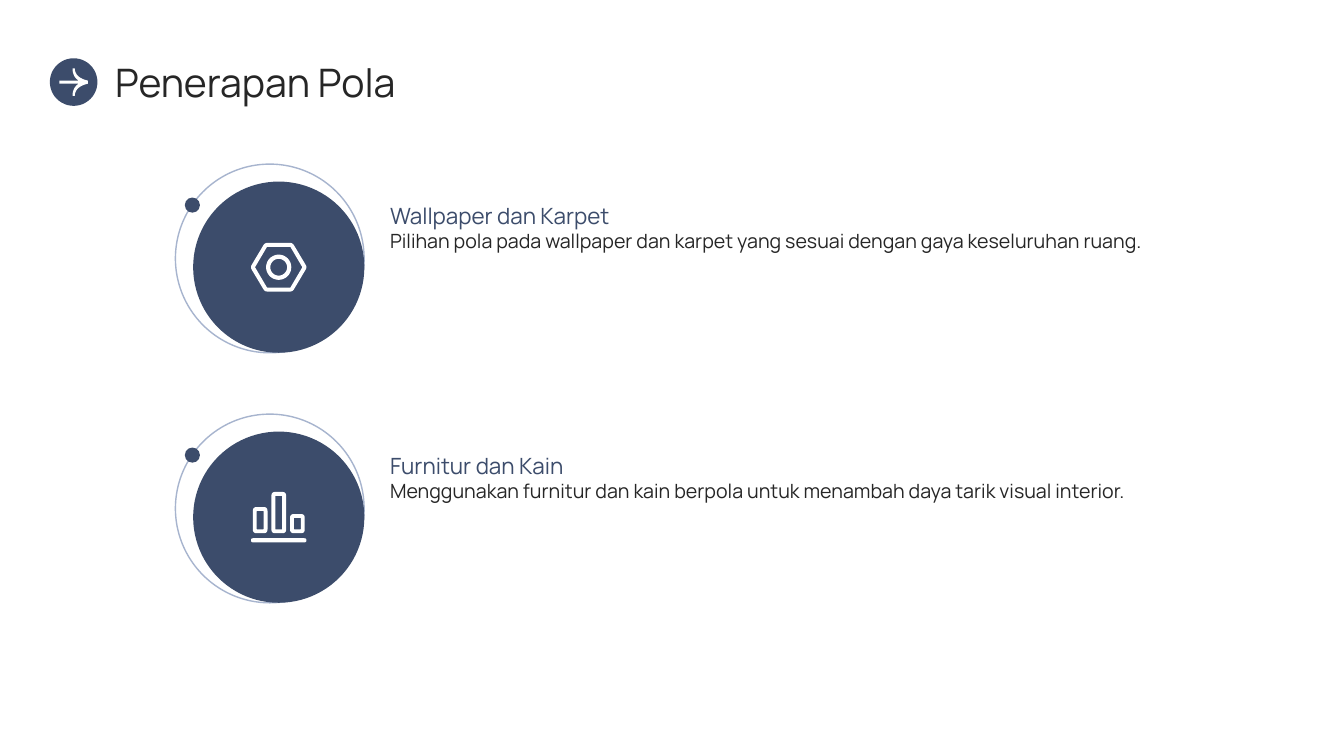
from math import cos, dist, pi, sin

from pptx import Presentation
from pptx import util as u
from pptx.dml import color
from pptx.enum import shapes, text

COLORS = {"navy": "3C4C6B", "pale": "A7B4CE", "ink": "262626", "white": "FFFFFF"}


def bend(start, control, end, steps=8):
    ratios = [step / steps for step in range(steps + 1)]
    return [tuple((1 - t) ** 2 * a + 2 * t * (1 - t) * b + t * t * c
                  for a, b, c in zip(start, control, end)) for t in ratios]


def toward(start, end, length):
    ratio = length / dist(start, end)
    return tuple(a + (b - a) * ratio for a, b in zip(start, end))


def rounded(corners, radius):
    points = []
    for index, corner in enumerate(corners):
        following = corners[(index + 1) % len(corners)]
        points += bend(toward(corner, corners[index - 1], radius), corner,
                       toward(corner, following, radius))
    return points


def block(left, top, right, bottom, radius):
    return rounded([(left, top), (right, top), (right, bottom), (left, bottom)], radius)


def circle(x, y, radius, steps=48):
    angles = [2 * pi * step / steps for step in range(steps)]
    return [(x + radius * cos(angle), y + radius * sin(angle)) for angle in angles]


def hexagon(x, y, half_width, half_top, half_height, radius):
    corners = [(-half_width, 0), (-half_top, -half_height), (half_top, -half_height),
               (half_width, 0), (half_top, half_height), (-half_top, half_height)]
    return rounded([(x + dx, y + dy) for dx, dy in corners], radius)


def nut_icon():
    x, y = 199.1, 190.9
    return [hexagon(x, y, 20.3, 9.9, 17.4, 2), hexagon(x, y, 16.9, 8.3, 14.6, 0.3),
            circle(x, y, 9), circle(x, y, 6)]


def bars_icon():
    left, bottom, width, pitch, wall = 180.6, 380.9, 10.5, 13.3, 2.8
    contours = [block(179.3, 384.5, 218.9, 387.4, 1.4)]
    for index, top in enumerate((362.2, 351.4, 367.2)):
        start = left + index * pitch
        end = start + width
        contours += [block(start, top, end, bottom, 2.8),
                     block(start + wall, top + wall, end - wall, bottom - wall, 0.2)]
    return contours


def arrow_icon():
    middle = 58.7
    upper = [(42.5, 57.6), *bend((56.2, 57.6), (51.8, 54.7), (51.8, 48.9)),
             *bend((53.4, 48.9), (53.6, 55.5), (62.7, 57.6))]
    return [upper + [(x, 2 * middle - y) for x, y in reversed(upper)]]


class Slide:
    """Draws the elements of one slide in a shared style."""

    font = "Manrope"

    def __init__(self, page):
        self.page = page

    def tint(self, name):
        return color.RGBColor.from_string(COLORS[name])

    def paint(self, shape, fill, line=None):
        shape.shadow.inherit = False
        shape.fill.solid()
        shape.fill.fore_color.rgb = self.tint(fill)
        if line:
            shape.line.color.rgb = self.tint(line)
            shape.line.width = u.Pt(1)
        else:
            shape.line.fill.background()

    def disc(self, left, top, size, fill, line=None):
        oval = self.page.shapes.add_shape(
            shapes.MSO_SHAPE.OVAL, u.Pt(left), u.Pt(top), u.Pt(size), u.Pt(size))
        self.paint(oval, fill, line)

    def icon(self, contours):
        units = [[(x * 100, y * 100) for x, y in contour] for contour in contours]
        builder = self.page.shapes.build_freeform(*units[0][0], scale=u.Pt(1) / 100)
        builder.add_line_segments(units[0][1:], close=True)
        for contour in units[1:]:
            builder.move_to(*contour[0])
            builder.add_line_segments(contour[1:], close=True)
        self.paint(builder.convert_to_shape(), "white")

    def label(self, words, left, top, width, height, size, ink, anchor):
        box = self.page.shapes.add_textbox(
            u.Pt(left), u.Pt(top), u.Pt(width), u.Pt(height))
        frame = box.text_frame
        frame.word_wrap = True
        frame.vertical_anchor = anchor
        frame.margin_left = frame.margin_right = 0
        frame.margin_top = frame.margin_bottom = 0
        para = frame.paragraphs[0]
        para.text = words
        para.font.name = self.font
        para.font.size = u.Pt(size)
        para.font.color.rgb = self.tint(ink)

    def topic(self, top, heading, detail, contours):
        self.disc(125.3, top, 134.8, "white", "pale")
        self.disc(138, top + 12.5, 122.3, "navy")
        self.icon(contours)
        self.label(detail, 278.6, top + 46.3, 555.1, 77.8, 14, "ink",
                   text.MSO_ANCHOR.TOP)
        self.disc(132, top + 23.9, 10.8, "navy")
        self.label(heading, 278.6, top + 12.5, 555.1, 33.8, 16, "navy",
                   text.MSO_ANCHOR.BOTTOM)


def main():
    deck = Presentation()
    deck.slide_width, deck.slide_height = u.Pt(960), u.Pt(540)
    slide = Slide(deck.slides.add_slide(deck.slide_layouts[6]))
    topics = [
        ("Wallpaper dan Karpet",
         "Pilihan pola pada wallpaper dan karpet yang sesuai dengan gaya "
         "keseluruhan ruang.", nut_icon()),
        ("Furnitur dan Kain",
         "Menggunakan furnitur dan kain berpola untuk menambah daya tarik "
         "visual interior.", bars_icon()),
    ]
    for index, topic in enumerate(topics):
        slide.topic(117.2 + index * 178.6, *topic)
    slide.label("Penerapan Pola", 82.2, 41.8, 824.4, 33.8, 28, "ink",
                text.MSO_ANCHOR.MIDDLE)
    slide.disc(35.6, 41.6, 34, "navy")
    slide.icon(arrow_icon())
    deck.save("out.pptx")


if __name__ == "__main__":
    main()
